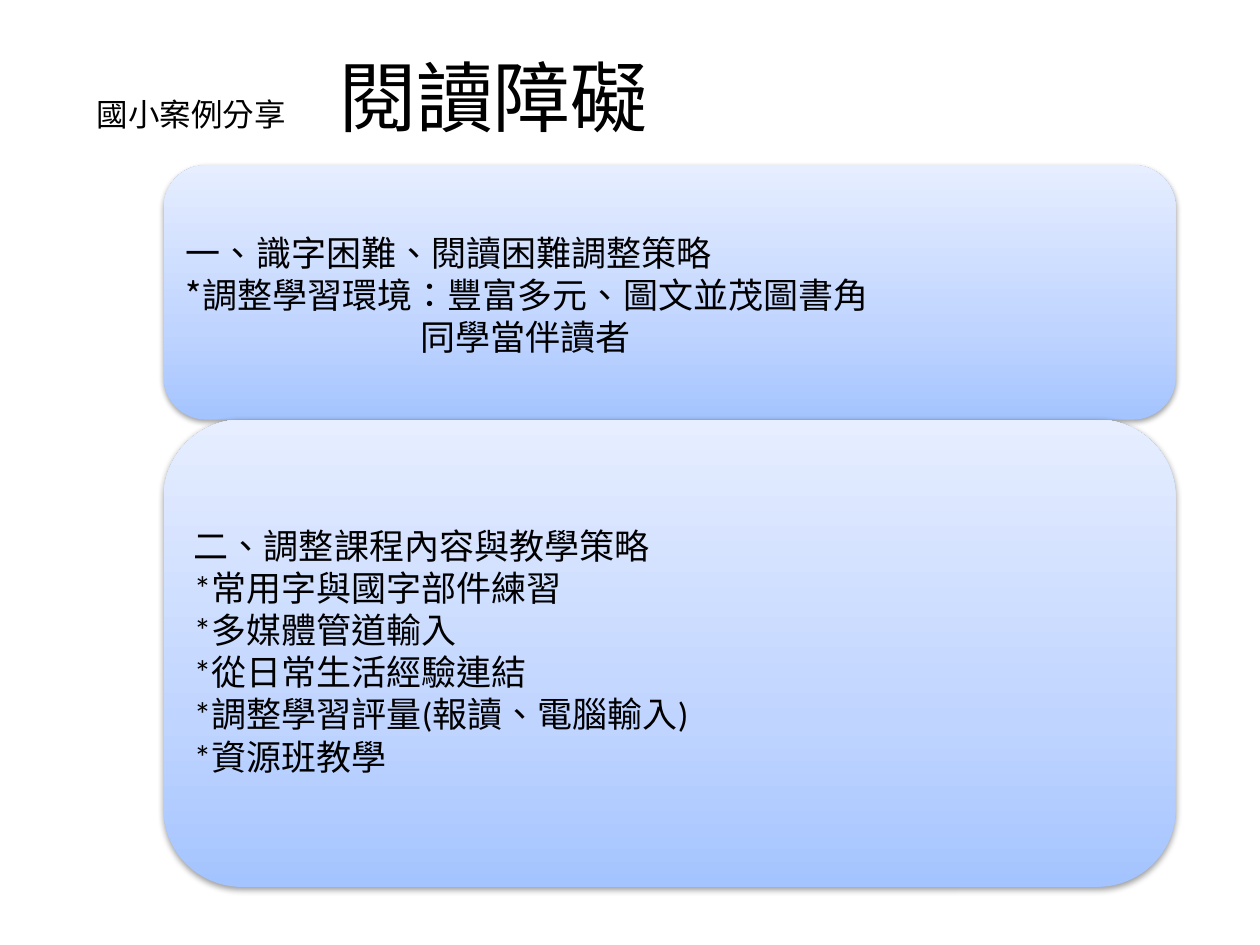
import copy
from dataclasses import dataclass

import pptx
import pptx.dml.color
import pptx.enum.shapes
import pptx.enum.text
import pptx.oxml
import pptx.oxml.ns
import pptx.util
from pptx.util import Cm


@dataclass(frozen=True)
class Theme:
    ink: str = "000000"
    stops: tuple = ((0, "A4C4FF"), (0.35, "BFD4FF"), (1, "E6EEFF"))
    title_size: int = 44
    label_size: int = 18
    body_size: int = 20
    title_font: str = "Noto Sans CJK SC"
    body_font: str = "Noto Sans CJK TC"
    latin_font: str = "Calibri"


theme = Theme()
SHADOW = (
    f'<a:effectLst {pptx.oxml.ns.nsdecls("a")}>'
    '<a:outerShdw blurRad="40000" dist="20000" dir="5400000" rotWithShape="0">'
    '<a:srgbClr val="000000"><a:alpha val="38000"/></a:srgbClr>'
    '</a:outerShdw></a:effectLst>'
)


def add_text(paragraph, text, *, size, latin, east_asian):
    run = paragraph.add_run()
    run.text = text
    run.font.size = pptx.util.Pt(size)
    run.font.name = latin
    run.font.color.rgb = pptx.dml.color.RGBColor.from_string(theme.ink)
    properties = run._r.get_or_add_rPr()
    properties.set("lang", "zh-TW")
    properties.find(pptx.oxml.ns.qn("a:latin")).addnext(pptx.oxml.parse_xml(
        f'<a:ea {pptx.oxml.ns.nsdecls("a")} typeface="{east_asian}"/>'))


presentation = pptx.Presentation()
presentation.slide_width = Cm(25.4)
presentation.slide_height = Cm(19.05)
slide = presentation.slides.add_slide(presentation.slide_layouts[6])

# Strategy panels: top, height, side inset, top inset, latin font, lines with indents
panels = [
    (3.33, 5.13, 0.2, 0.35, theme.body_font, [
        ("一、識字困難、閱讀困難調整策略", 0),
        ("*調整學習環境：豐富多元、圖文並茂圖書角", 0),
        ("同學當伴讀者", 4.72),
    ]),
    (8.46, 9.42, 0.15, 0.15, theme.latin_font, [
        ("二、調整課程內容與教學策略", 0),
        ("*常用字與國字部件練習", 0),
        ("*多媒體管道輸入", 0),
        ("*從日常生活經驗連結", 0),
        ("*調整學習評量(報讀、電腦輸入)", 0),
        ("*資源班教學", 0),
    ]),
]
for top, height, side_inset, top_inset, latin, lines in panels:
    panel = slide.shapes.add_shape(
        pptx.enum.shapes.MSO_SHAPE.ROUNDED_RECTANGLE,
        Cm(3.3), Cm(top), Cm(20.4), Cm(height))
    panel.line.fill.background()

    # Gradient from bottom to top, with a soft shadow
    panel.fill.gradient()
    panel.fill.gradient_angle = 90
    stop_list = panel.fill._fill._gradFill.gsLst
    stop_list.insert(1, copy.deepcopy(stop_list[0]))
    for stop, (position, color) in zip(panel.fill.gradient_stops, theme.stops):
        stop.position = position
        stop.color.rgb = pptx.dml.color.RGBColor.from_string(color)
    panel._element.spPr.append(pptx.oxml.parse_xml(SHADOW))

    frame = panel.text_frame
    frame.word_wrap = True
    frame.vertical_anchor = pptx.enum.text.MSO_ANCHOR.MIDDLE
    frame.margin_left = frame.margin_right = Cm(side_inset)
    frame.margin_top, frame.margin_bottom = Cm(top_inset), Cm(0.15)
    for index, (text, indent) in enumerate(lines):
        paragraph = frame.add_paragraph() if index else frame.paragraphs[0]
        paragraph.alignment = pptx.enum.text.PP_ALIGN.LEFT
        paragraph.line_spacing = 0.9
        paragraph.space_after = pptx.util.Pt(2.5)
        if indent:
            paragraph._p.get_or_add_pPr().set("marL", str(Cm(indent)))
        add_text(paragraph, text, size=theme.body_size,
                 latin=latin, east_asian=theme.body_font)

# Title: small label, then the topic at a tab stop
title = slide.shapes.add_textbox(Cm(1.7), Cm(0.33), Cm(22.86), Cm(3.18))
title.text_frame.word_wrap = True
title.text_frame.vertical_anchor = pptx.enum.text.MSO_ANCHOR.MIDDLE
paragraph = title.text_frame.paragraphs[0]
paragraph._p.get_or_add_pPr().append(pptx.oxml.parse_xml(
    f'<a:tabLst {pptx.oxml.ns.nsdecls("a")}><a:tab pos="{Cm(4.9)}" algn="l"/></a:tabLst>'))
for text, size in (("國小案例分享\t", theme.label_size), ("閱讀障礙", theme.title_size)):
    add_text(paragraph, text, size=size,
             latin=theme.title_font, east_asian=theme.title_font)

presentation.save("out.pptx")
